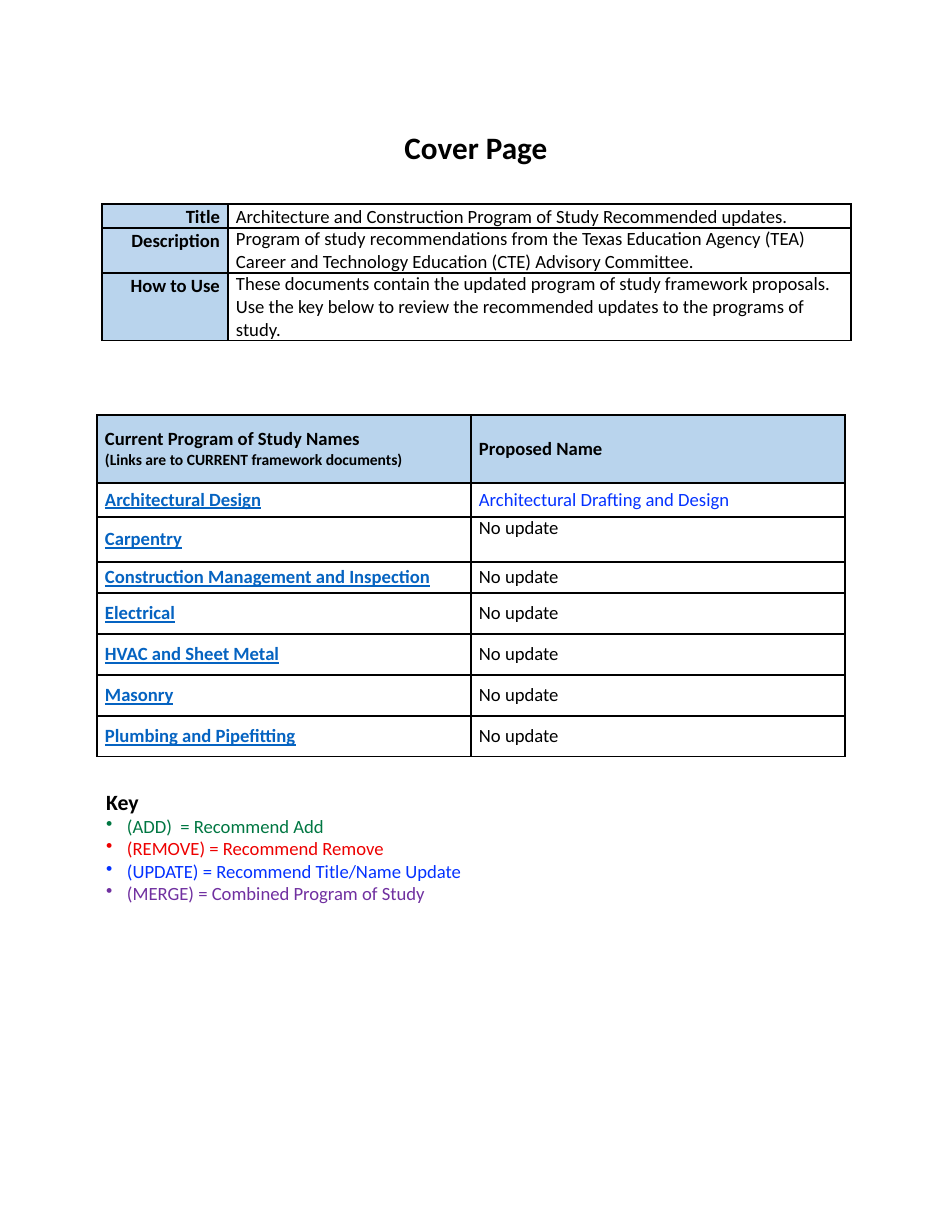
from lxml import etree
from pptx import Presentation
from pptx.dml.color import RGBColor
from pptx.enum.text import MSO_ANCHOR, PP_ALIGN
from pptx.oxml.ns import qn
from pptx.util import Emu, Pt

LEFT, CENTER, RIGHT = PP_ALIGN.LEFT, PP_ALIGN.CENTER, PP_ALIGN.RIGHT
TOP, MIDDLE = MSO_ANCHOR.TOP, MSO_ANCHOR.MIDDLE

FONT = "Calibri"
COLORS = {
    "black": "000000",
    "white": "FFFFFF",
    "label": "BDD6EE",
    "header": "B9D4ED",
    "link": "0563C1",
    "add": "007742",
    "remove": "ED0000",
    "update": "0432FF",
    "merge": "7030A0",
}

DETAILS = [
    ("Title", "Architecture and Construction Program of Study Recommended updates.", "label"),
    ("Description", "Program of study recommendations from the Texas Education Agency (TEA) "
     "Career and Technology Education (CTE) Advisory Committee.", "label"),
    ("How to Use", "These documents contain the updated program of study framework proposals. "
     "Use the key below to review the recommended updates to the programs of study.", "header"),
]
PROGRAMS = [
    "Architectural Design",
    "Carpentry",
    "Construction Management and Inspection",
    "Electrical",
    "HVAC and Sheet Metal",
    "Masonry",
    "Plumbing and Pipefitting",
]
RENAMED = {"Architectural Design": "Architectural Drafting and Design"}
KEY = [
    ("(ADD)  = Recommend Add", "add"),
    ("(REMOVE) = Recommend Remove", "remove"),
    ("(UPDATE) = Recommend Title/Name Update", "update"),
    ("(MERGE) = Combined Program of Study", "merge"),
]


def px(length):
    return Emu(round(length * 914400 / 112))


def rgb(name):
    return RGBColor.from_string(COLORS[name])


def write(para, text, size=12, color="black", bold=False, underline=False, align=LEFT):
    para.text = text
    para.alignment = align
    font = para.font
    font.name, font.size = FONT, Pt(size)
    font.bold, font.underline = bold, underline
    font.color.rgb = rgb(color)


def add_bullet(para):
    props = para._p.get_or_add_pPr()
    props.set("marL", str(px(21)))
    props.set("indent", str(-px(21)))
    bullet = etree.Element(qn("a:buChar"), char="•")
    props.insert_element_before(bullet, "a:tabLst", "a:defRPr", "a:extLst")


def add_borders(cell):
    props = cell._tc.get_or_add_tcPr()
    for index, side in enumerate(("lnL", "lnR", "lnT", "lnB")):
        line = etree.Element(qn(f"a:{side}"), w=str(Pt(1)))
        fill = etree.SubElement(line, qn("a:solidFill"))
        etree.SubElement(fill, qn("a:srgbClr"), val=COLORS["black"])
        props.insert(index, line)


def add_grid(page, left, top, widths, heights):
    frame = page.shapes.add_table(len(heights), len(widths), px(left), px(top),
                                  px(sum(widths)), px(sum(heights)))
    table = frame.table
    table.first_row = table.horz_banding = False
    for column, width in zip(table.columns, widths):
        column.width = px(width)
    for row, height in zip(table.rows, heights):
        row.height = px(height)
    return table


def fill_cell(cell, text, fill=None, anchor=MIDDLE, **style):
    cell.margin_left = cell.margin_right = px(8)
    cell.margin_top = cell.margin_bottom = 0
    cell.vertical_anchor = anchor
    if fill:
        cell.fill.solid()
        cell.fill.fore_color.rgb = rgb(fill)
    else:
        cell.fill.background()
    add_borders(cell)
    para = cell.text_frame.paragraphs[0]
    write(para, text, **style)
    return para


def add_title(page):
    box = page.shapes.add_textbox(0, px(119), px(952), px(56))
    box.text_frame.word_wrap = True
    box.text_frame.vertical_anchor = MIDDLE
    write(box.text_frame.paragraphs[0], "Cover Page", size=20, bold=True, align=CENTER)


def add_details(page):
    table = add_grid(page, 102, 204, [126, 623], [24, 45, 67])
    for row, (label, text, fill) in enumerate(DETAILS):
        para = fill_cell(table.cell(row, 0), label, fill, TOP, bold=True, align=RIGHT)
        para.line_spacing = 1.07
        para = fill_cell(table.cell(row, 1), text, anchor=TOP)
        if row == 0:
            para.line_spacing = 1.07


def add_programs(page):
    table = add_grid(page, 97, 415, [374, 374], [68, 34, 45, 31] + [41] * 4)
    names = table.cell(0, 0)
    fill_cell(names, "Current Program of Study Names", "header", bold=True)
    write(names.text_frame.add_paragraph(), "(Links are to CURRENT framework documents)",
          size=10, bold=True)
    fill_cell(table.cell(0, 1), "Proposed Name", "header", bold=True)
    for row, name in enumerate(PROGRAMS, start=1):
        fill_cell(table.cell(row, 0), name, "white", color="link", bold=True, underline=True)
        fill_cell(table.cell(row, 1), RENAMED.get(name, "No update"),
                  anchor=TOP if name == "Carpentry" else MIDDLE,
                  color="update" if name in RENAMED else "black")


def add_key(page):
    box = page.shapes.add_textbox(px(95), px(783), px(638), px(128))
    frame = box.text_frame
    frame.word_wrap = True
    write(frame.paragraphs[0], "Key", size=14, bold=True)
    for text, color in KEY:
        para = frame.add_paragraph()
        write(para, text, color=color)
        add_bullet(para)


def main():
    deck = Presentation()
    deck.slide_width, deck.slide_height = px(952), px(1232)
    page = deck.slides.add_slide(deck.slide_layouts[6])
    add_title(page)
    add_details(page)
    add_programs(page)
    add_key(page)
    deck.save("out.pptx")


if __name__ == "__main__":
    main()
